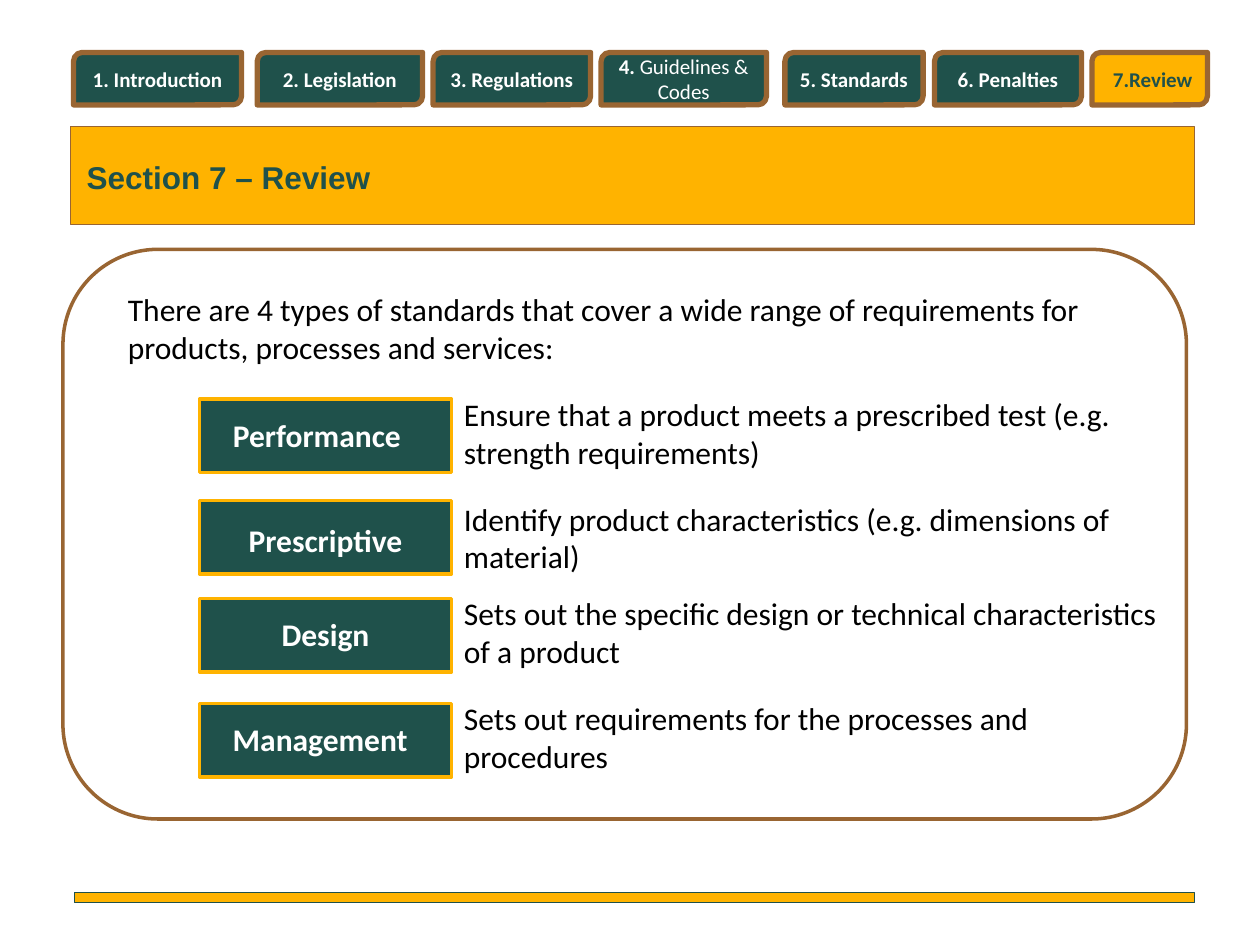
from dataclasses import dataclass
from typing import Any

from pptx import Presentation
from pptx.dml.color import RGBColor
from pptx.enum.shapes import MSO_SHAPE
from pptx.enum.text import MSO_ANCHOR, PP_ALIGN
from pptx.util import Pt

COLOURS = {"green": "1F514B", "amber": "FFB300", "brown": "996532",
           "white": "FFFFFF", "black": "000000"}
TABS = [
    (42, 96, [("1. Introduction", True)]),
    (147, 94.5, [("2. Legislation", True)]),
    (247.5, 90, [("3. Regulations", True)]),
    (343.5, 94.5, [("4. ", True), ("Guidelines & Codes", False)]),
    (448.5, 79, [("5. Standards", True)]),
    (534, 84, [("6. Penalties", True)]),
]
STANDARDS = [
    ("Performance", 228, 126, 234, 120, PP_ALIGN.LEFT, 222,
     "Ensure that a product meets a prescribed test (e.g. strength requirements)"),
    ("Prescriptive", 286, 114, 294, 144, PP_ALIGN.CENTER, 282,
     "Identify product characteristics (e.g. dimensions of material)"),
    ("Design", 342, 126, 348, 120, PP_ALIGN.CENTER, 336,
     "Sets out the specific design or technical characteristics of a product"),
    ("Management", 402, 114, 408, 138, PP_ALIGN.CENTER, 396,
     "Sets out requirements for the processes and procedures"),
]


@dataclass
class SlideBuilder:
    """Draw styled elements on the current slide, with lengths in points."""

    page: Any
    font: str = "Calibri"
    size: float = 18

    def colour(self, name):
        return RGBColor.from_string(COLOURS[name])

    def fill_text(self, frame, spans, colour, size, align, font=None):
        frame.word_wrap = True
        para = frame.paragraphs[0]
        para.alignment = align
        para.font.name = font or self.font
        para.font.size = Pt(size)
        para.font.color.rgb = self.colour(colour)
        for words, bold in spans:
            span = para.add_run()
            span.text = words
            span.font.bold = bold

    def shape(self, kind, left, top, width, height, fill, line, weight):
        shape = self.page.shapes.add_shape(
            kind, Pt(left), Pt(top), Pt(width), Pt(height))
        shape.shadow.inherit = False
        if fill:
            shape.fill.solid()
            shape.fill.fore_color.rgb = self.colour(fill)
        else:
            shape.fill.background()
        shape.line.color.rgb = self.colour(line)
        shape.line.width = Pt(weight)
        return shape

    def text(self, words, left, top, width, height, colour="black",
             bold=False, align=PP_ALIGN.LEFT, font=None):
        box = self.page.shapes.add_textbox(
            Pt(left), Pt(top), Pt(width), Pt(height))
        self.fill_text(box.text_frame, [(words, bold)], colour, self.size,
                       align, font)

    def tab(self, left, width, spans, fill="green", colour="white",
            align=PP_ALIGN.CENTER):
        tab = self.shape(MSO_SHAPE.ROUND_2_DIAG_RECTANGLE, left, 30, width, 30,
                         fill, "brown", 3)
        tab.text_frame.vertical_anchor = MSO_ANCHOR.MIDDLE
        self.fill_text(tab.text_frame, spans, colour, 12, align)

    def standard(self, name, top, label_left, label_top, label_width, align,
                 description_top, description):
        self.shape(MSO_SHAPE.RECTANGLE, 114, top, 144, 42, "green", "amber", 2)
        self.text(name, label_left, label_top, label_width, 29, "white", True, align)
        self.text(description, 258, description_top, 420, 51)


def main():
    deck = Presentation()
    deck.slide_width, deck.slide_height = Pt(720), Pt(540)
    builder = SlideBuilder(deck.slides.add_slide(deck.slide_layouts[6]))

    builder.shape(MSO_SHAPE.ROUNDED_RECTANGLE, 36, 142.5, 642, 325.5,
                  None, "brown", 2)
    builder.shape(MSO_SHAPE.RECTANGLE, 42.5, 510, 640, 6, "amber", "green", 0.5)
    builder.text("There are 4 types of standards that cover a wide range of "
                 "requirements for products, processes and services:",
                 66, 162, 594, 51)
    for standard in STANDARDS:
        builder.standard(*standard)

    builder.shape(MSO_SHAPE.RECTANGLE, 40.5, 72.5, 642, 56, "amber", "brown", 0.5)
    builder.text("Section 7 – Review", 42.5, 86.5, 545, 29, "green", True,
                 font="Arial")
    for tab in TABS:
        builder.tab(*tab)
    builder.tab(624, 66, [("7.Review", True)], "amber", "green", PP_ALIGN.RIGHT)
    deck.save("out.pptx")


if __name__ == "__main__":
    main()
